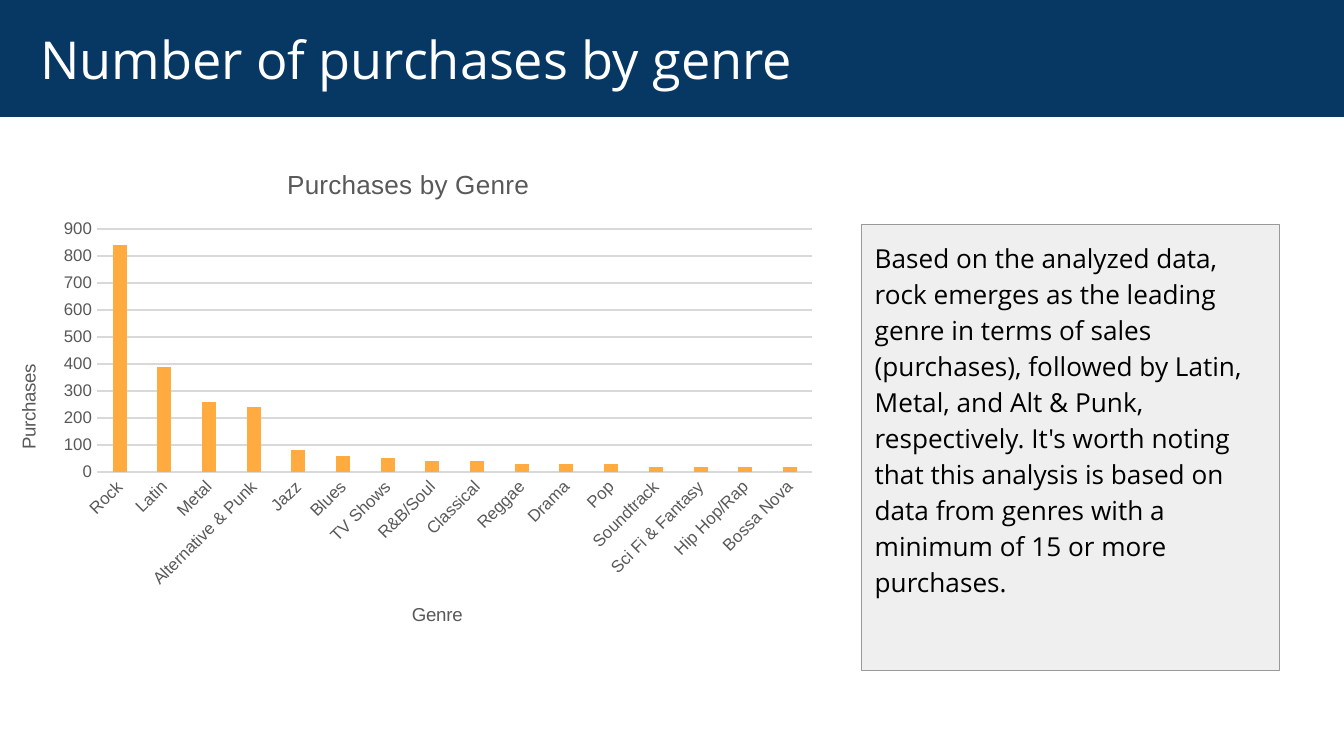
import pptx
import pptx.chart.data
import pptx.dml.color
import pptx.enum.chart
import pptx.enum.shapes
import pptx.enum.text
import pptx.oxml
import pptx.oxml.ns
import pptx.util
from pptx.util import Inches

COLORS = {
    "navy": "073763",
    "white": "FFFFFF",
    "black": "000000",
    "panel": "EFEFEF",
    "border": "999999",
    "bar": "FFAB40",
    "label": "595959",
    "grid": "D9D9D9",
}

PURCHASES = {
    "Rock": 840, "Latin": 390, "Metal": 260, "Alternative & Punk": 240,
    "Jazz": 80, "Blues": 60, "TV Shows": 50, "R&B/Soul": 40,
    "Classical": 40, "Reggae": 30, "Drama": 30, "Pop": 30,
    "Soundtrack": 20, "Sci Fi & Fantasy": 20, "Hip Hop/Rap": 20, "Bossa Nova": 20,
}

COMMENT = (
    "Based on the analyzed data, rock emerges as the leading genre in terms of "
    "sales (purchases), followed by Latin, Metal, and Alt & Punk, respectively. "
    "It's worth noting that this analysis is based on data from genres with a "
    "minimum of 15 or more purchases."
)


def rgb(name):
    return pptx.dml.color.RGBColor.from_string(COLORS[name])


def style_font(font, name, size, color):
    font.name = name
    font.size = pptx.util.Pt(size)
    font.bold = False
    font.color.rgb = rgb(color)


def style_line(line, color):
    line.color.rgb = rgb(color)
    line.width = pptx.util.Pt(0.75)


def add_text_block(slide, box, text, fill, size, color, anchor, left_inset=0.1):
    sp = slide.shapes.add_shape(
        pptx.enum.shapes.MSO_SHAPE.RECTANGLE, *map(Inches, box))
    sp.shadow.inherit = False
    sp.fill.solid()
    sp.fill.fore_color.rgb = rgb(fill)
    sp.line.fill.background()
    tf = sp.text_frame
    tf.word_wrap = True
    tf.vertical_anchor = anchor
    tf.margin_left = Inches(left_inset)
    tf.margin_right = tf.margin_top = tf.margin_bottom = Inches(0.1)
    p = tf.paragraphs[0]
    p.text = text
    p.alignment = pptx.enum.text.PP_ALIGN.LEFT
    style_font(p.font, "Open Sans", size, color)
    return sp


def set_layout(parent, index, **fractions):
    for old in parent.findall(pptx.oxml.ns.qn("c:layout")):
        parent.remove(old)
    inner = '<c:layoutTarget val="inner"/>' if "w" in fractions else ""
    modes = '<c:xMode val="edge"/><c:yMode val="edge"/>'
    values = "".join(f'<c:{k} val="{v}"/>' for k, v in fractions.items())
    parent.insert(index, pptx.oxml.parse_xml(
        f'<c:layout {pptx.oxml.ns.nsdecls("c")}><c:manualLayout>'
        f"{inner}{modes}{values}</c:manualLayout></c:layout>"))


def set_title(title, text, size, x, y):
    p = title.text_frame.paragraphs[0]
    p.text = text
    style_font(p.font, "Arial", size, "label")
    set_layout(title._element, 1, x=x, y=y)


def style_axis(axis):
    axis.major_tick_mark = pptx.enum.chart.XL_TICK_MARK.NONE
    axis.minor_tick_mark = pptx.enum.chart.XL_TICK_MARK.NONE
    style_font(axis.tick_labels.font, "Arial", 9, "label")


def add_purchase_chart(slide, box):
    data = pptx.chart.data.CategoryChartData()
    data.categories = list(PURCHASES)
    data.add_series("Series 1", list(PURCHASES.values()))
    chart = slide.shapes.add_chart(
        pptx.enum.chart.XL_CHART_TYPE.COLUMN_CLUSTERED,
        *map(Inches, box), data).chart
    style_font(chart.font, "Arial", 10, "black")
    chart.has_legend = False
    plot = chart.plots[0]
    plot.gap_width = 219
    plot.overlap = -27
    plot.vary_by_categories = False
    fill = plot.series[0].format.fill
    fill.solid()
    fill.fore_color.rgb = rgb("bar")

    cat, val = chart.category_axis, chart.value_axis
    for axis in (cat, val):
        style_axis(axis)
    style_line(cat.format.line, "grid")
    cat._element.find(".//" + pptx.oxml.ns.qn("a:bodyPr")).set("rot", "-2700000")
    val.minimum_scale, val.maximum_scale, val.major_unit = 0, 900, 100
    val.format.line.fill.background()
    style_line(val.major_gridlines.format.line, "grid")

    set_title(chart.chart_title, "Purchases by Genre", 14, 0.35, 0.03)
    set_title(cat.axis_title, "Genre", 10, 0.5, 0.89)
    set_title(val.axis_title, "Purchases", 10, 0.03, 0.42)
    plot_area = chart._chartSpace.chart.plotArea
    set_layout(plot_area, 0, x=0.13, y=0.16, w=0.85, h=0.48)


def main():
    prs = pptx.Presentation()
    prs.slide_width = Inches(10)
    prs.slide_height = prs.slide_width * 9 // 16
    slide = prs.slides.add_slide(prs.slide_layouts[6])
    anchors = pptx.enum.text.MSO_ANCHOR
    comment = add_text_block(slide, (6.41, 1.67, 3.11, 3.32), COMMENT,
                             "panel", 14, "black", anchors.TOP)
    style_line(comment.line, "border")
    p = comment.text_frame.paragraphs[0]
    p.line_spacing = 1.15
    p.space_after = pptx.util.Pt(16)
    add_text_block(slide, (0, 0, 10, 0.87), "Number of purchases by genre",
                   "navy", 28, "white", anchors.MIDDLE, left_inset=0.3)
    add_purchase_chart(slide, (-0.09, 1.1, 6.26, 3.77))
    prs.save("out.pptx")


if __name__ == "__main__":
    main()
